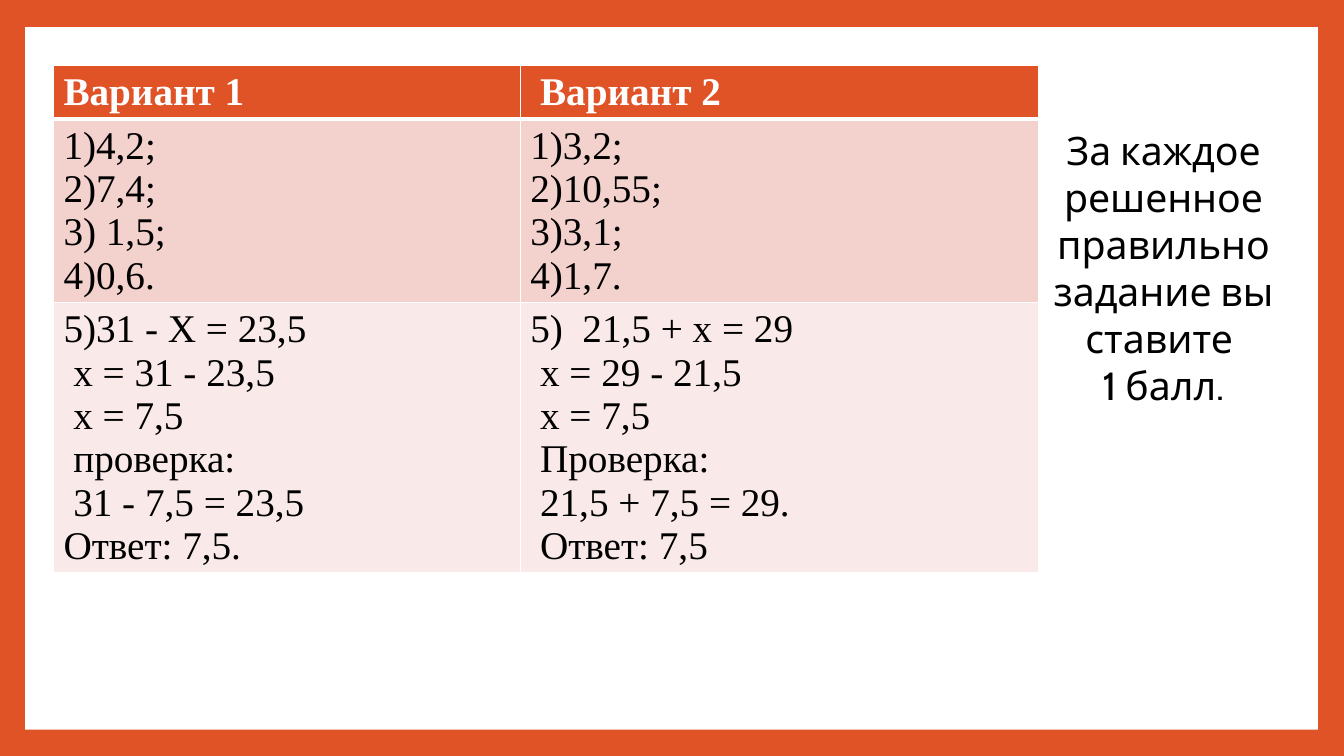
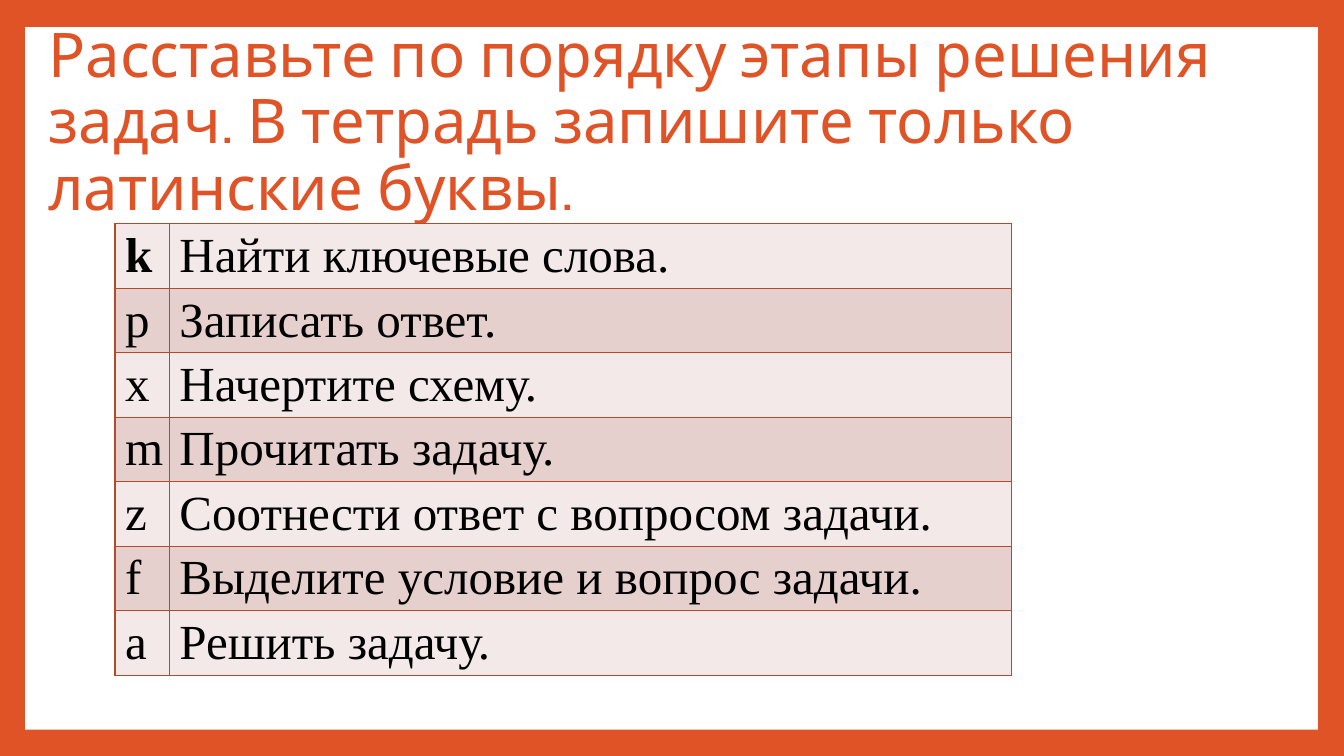
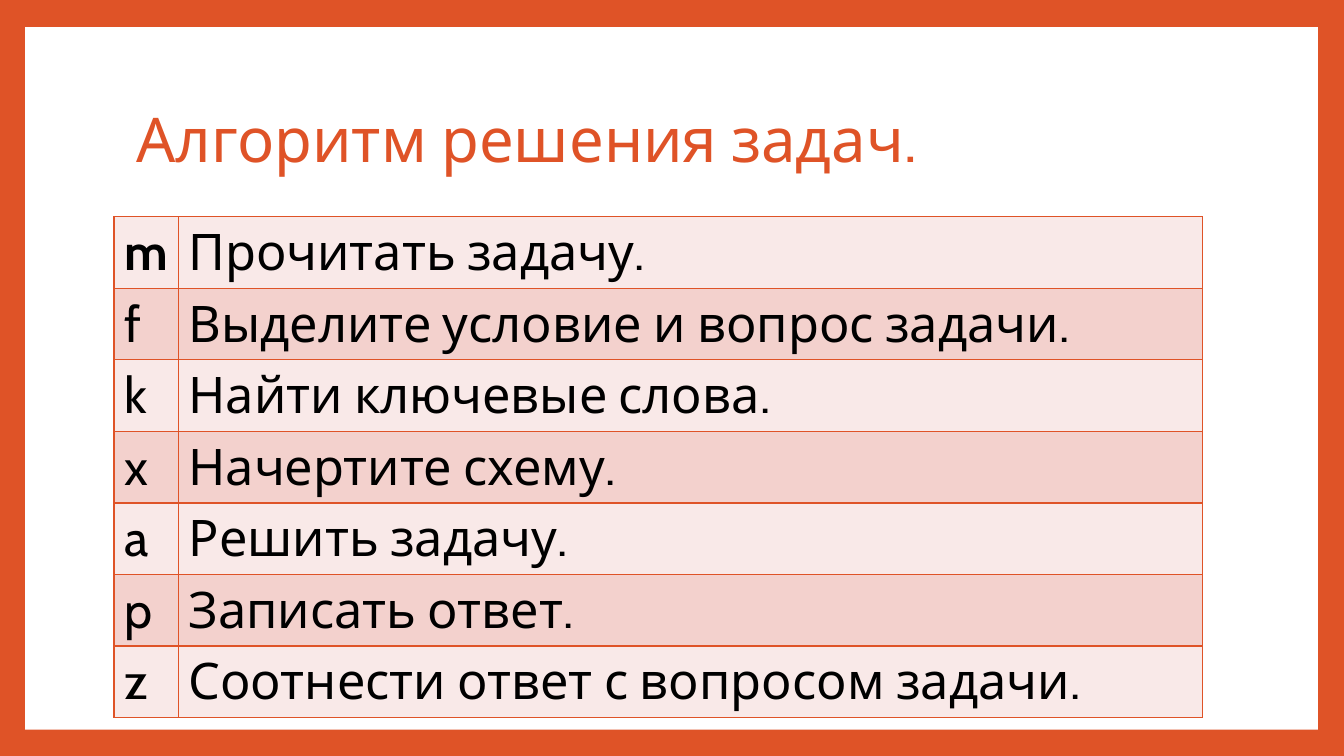
from lxml import etree
from pptx import Presentation
from pptx.dml.color import RGBColor
from pptx.enum.shapes import MSO_SHAPE
from pptx.enum.text import MSO_ANCHOR, MSO_AUTO_SIZE, PP_ALIGN
from pptx.oxml.ns import qn
from pptx.util import Inches, Pt

RECT = MSO_SHAPE.RECTANGLE
MIDDLE = MSO_ANCHOR.MIDDLE
NO_FIT = MSO_AUTO_SIZE.NONE
GROW = MSO_AUTO_SIZE.SHAPE_TO_FIT_TEXT
LEFT, CENTER = PP_ALIGN.LEFT, PP_ALIGN.CENTER
TITLE_ONLY, BLANK = 5, 6

# Shared look
ORANGE, RUST, WHITE, BLACK = "DF5327", "B64926", "FFFFFF", "000000"
PALE, PINK = "F9E9E8", "F3D1CD"
ASH, ROSE = "F3E9E8", "E5D0CD"
SANS, SERIF = "Cabin", "Times New Roman"
PANEL = (0.25, 0.27, 12.82, 6.97)

# Content
ANSWERS = [
    (["Вариант 1"], [" Вариант 2"]),
    (["1)4,2;", "2)7,4;", "3) 1,5;", "4)0,6."],
     ["1)3,2;", "2)10,55;", "3)3,1;", "4)1,7."]),
    (["5)31 - X = 23,5", " x = 31 - 23,5", " х = 7,5", " проверка:",
      " 31 - 7,5 = 23,5", "Ответ: 7,5."],
     ["5)  21,5 + x = 29", " x = 29 - 21,5", " х = 7,5", " Проверка:",
      " 21,5 + 7,5 = 29.", " Ответ: 7,5"]),
]
SCORE = ["За каждое решенное правильно задание вы ставите ", "1 балл."]
STEPS = {
    "m": "Прочитать задачу.",
    "f": "Выделите условие и вопрос задачи.",
    "k": "Найти ключевые слова.",
    "x": "Начертите схему.",
    "a": "Решить задачу.",
    "p": "Записать ответ.",
    "z": "Соотнести ответ с вопросом задачи.",
}
TASKS = [
    dict(title="Расставьте по порядку этапы решения задач. "
               "В тетрадь запишите только латинские буквы.",
         box=(0.38, 0.49, 12.33, 1.48), order="kpxmzfa",
         at=(1.14, 2.22), cols=(0.54, 8.35), row=0.64,
         font=SERIF, size=35, edge=RUST, bands=(ASH, ROSE)),
    dict(title="Алгоритм решения задач.",
         box=(1.25, 0.67, 10.8, 1.48), order="mfkxapz",
         at=(1.13, 2.15), cols=(0.64, 10.16), row=0.71,
         font=SANS, size=36, edge=ORANGE, bands=(PALE, PINK)),
]


def paint(fill, color):
    fill.solid()
    fill.fore_color.rgb = RGBColor.from_string(color)


def style(frame, font, size, color=BLACK, bold=False, align=LEFT):
    for para in frame.paragraphs:
        para.alignment = align
        para.font.name = font
        para.font.size = Pt(size)
        para.font.bold = bold
        para.font.color.rgb = RGBColor.from_string(color)


def set_edges(cell, color, widths):
    props = cell._tc.get_or_add_tcPr()
    for side, width in zip("LRTB", widths):
        line = etree.SubElement(props, qn(f"a:ln{side}"), w=str(Pt(width)))
        solid = etree.SubElement(line, qn("a:solidFill"))
        etree.SubElement(solid, qn("a:srgbClr"), val=color)


def add_grid(slide, at, cols, rows):
    size = (sum(cols), sum(rows))
    frame = slide.shapes.add_table(
        len(rows), len(cols), *map(Inches, at + size))
    grid = frame.table
    grid.first_row = grid.horz_banding = False
    for col, width in zip(grid.columns, cols):
        col.width = Inches(width)
    for row, height in zip(grid.rows, rows):
        row.height = Inches(height)
    return grid


def fill_cell(cell, text, fill, edge, widths=(1, 1, 1, 1), **look):
    cell.text = text
    set_edges(cell, edge, widths)
    paint(cell.fill, fill)
    style(cell.text_frame, **look)


def set_master(master, slide):
    """Give every slide the orange frame around a white panel."""
    paint(master.background.fill, ORANGE)
    panel = slide.shapes.add_shape(RECT, *map(Inches, PANEL))
    panel.shadow.inherit = False
    paint(panel.fill, WHITE)
    panel.line.fill.background()
    master.shapes.element.insert(2, panel.element)


def set_title(slide, text, box):
    title = slide.shapes.title
    title.left, title.top, title.width, title.height = map(Inches, box)
    frame = title.text_frame
    frame.text = text
    frame.auto_size = NO_FIT
    frame.vertical_anchor = MIDDLE
    frame.paragraphs[0].line_spacing = 0.9
    style(frame, SANS, 44, ORANGE)


def add_answers(slide):
    rows = [0.43 * len(left) + 0.1 for left, _ in ANSWERS]
    grid = add_grid(slide, (0.53, 0.65), (4.63, 5.14), rows)
    looks = [(ORANGE, WHITE, (1, 1, 1, 3)),
             (PINK, BLACK, (1, 1, 3, 1)),
             (PALE, BLACK, (1, 1, 1, 1))]
    for r, (pair, (fill, ink, widths)) in enumerate(zip(ANSWERS, looks)):
        for c, lines in enumerate(pair):
            fill_cell(grid.cell(r, c), "\n".join(lines), fill, WHITE, widths,
                      font=SERIF, size=28, color=ink, bold=r == 0)
    # Scoring rule
    note = slide.shapes.add_textbox(*map(Inches, (10.31, 1.2, 2.46, 2.93)))
    frame = note.text_frame
    frame.word_wrap = True
    frame.auto_size = GROW
    frame.text = "\n".join(SCORE)
    style(frame, SANS, 28, align=CENTER)


def add_steps(slide, task):
    set_title(slide, task["title"], task["box"])
    order = task["order"]
    grid = add_grid(slide, task["at"], task["cols"], [task["row"]] * len(order))
    for r, key in enumerate(order):
        for c, text in enumerate((key, STEPS[key])):
            fill_cell(grid.cell(r, c), text, task["bands"][r % 2], task["edge"],
                      font=task["font"], size=task["size"], bold=r == c == 0)


def main():
    prs = Presentation()
    prs.slide_width, prs.slide_height = Inches(13.33), Inches(7.5)
    first = prs.slides.add_slide(prs.slide_layouts[BLANK])
    set_master(prs.slide_master, first)
    add_answers(first)
    for task in TASKS:
        add_steps(prs.slides.add_slide(prs.slide_layouts[TITLE_ONLY]), task)
    prs.save("out.pptx")


if __name__ == "__main__":
    main()
